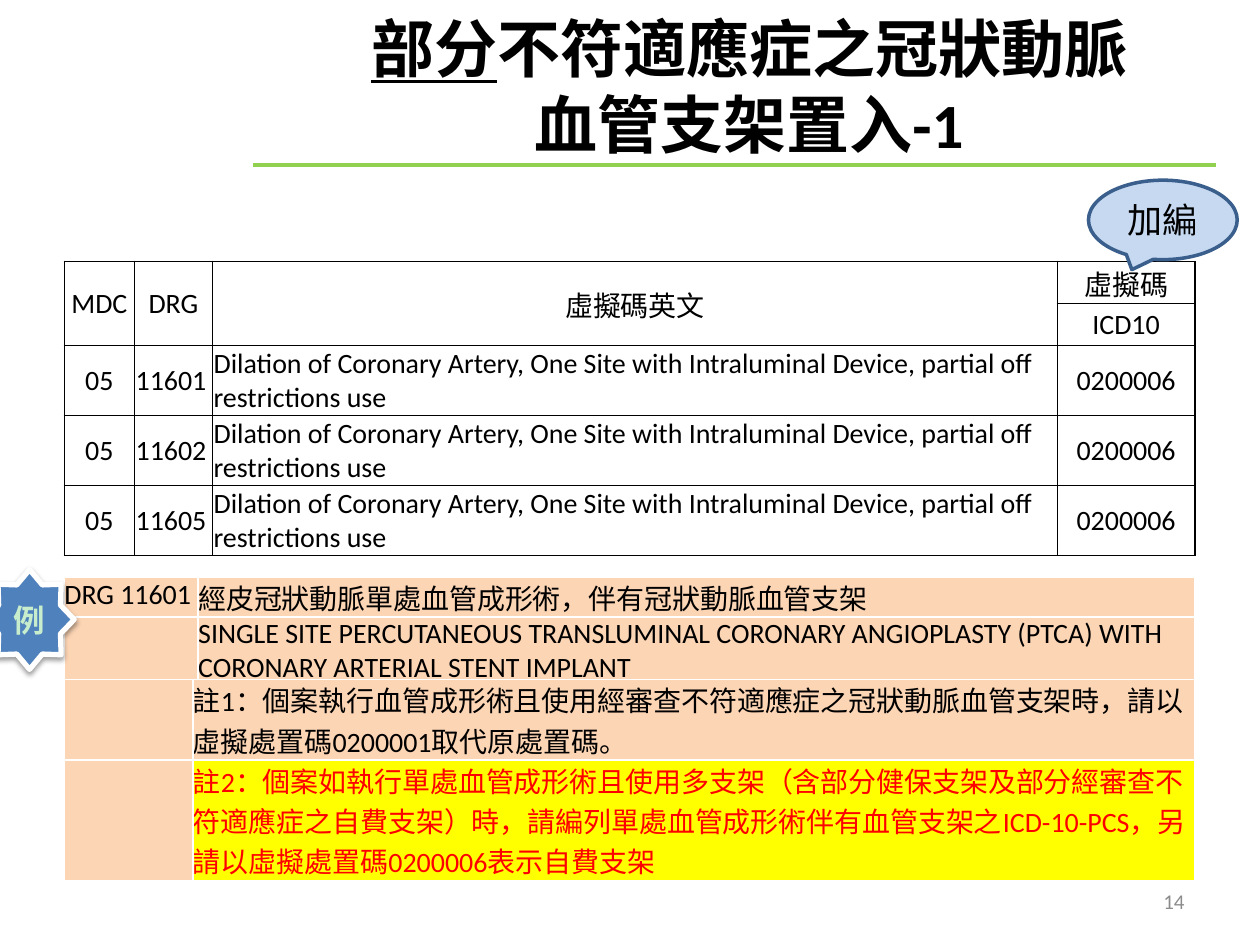
"""Build the slide on virtual codes for coronary stents that partly miss the indications."""
import lxml.etree
import pptx
import pptx.dml.color
import pptx.enum.dml
import pptx.enum.shapes
import pptx.enum.text
import pptx.oxml
import pptx.oxml.ns
import pptx.util

Pt = pptx.util.Pt
ALIGN = pptx.enum.text.PP_ALIGN
ANCHOR = pptx.enum.text.MSO_ANCHOR
SHAPE = pptx.enum.shapes.MSO_SHAPE

THEME = {
    "latin": "Calibri", "east_asian": "Noto Sans CJK TC",
    "black": "000000", "white": "FFFFFF", "red": "FF0000", "gray": "8C8C8C",
    "green": "92D050", "pale_green": "C7EDCC", "peach": "FCD5B5", "yellow": "FFFF00",
    "blue": "4F81BD", "pale_blue": "C6D9F1", "dark_blue": "3A5F8C",
    "title": 36, "callout": 20, "star": 18, "body": 16, "number": 12,
}

TITLE = [("部分", True), ("不符適應症之冠狀動脈\v血管支架置入-1", False)]
DEVICE = ("Dilation of Coronary Artery, One Site with Intraluminal Device, "
          "partial off restrictions use")
CODE_ROWS = [
    ["MDC", "DRG", "虛擬碼英文", "虛擬碼"],
    ["", "", "", "ICD10"],
    *[["05", drg, DEVICE, "0200006"] for drg in ("11601", "11602", "11605")],
]
EXAMPLE_ROWS = [
    ["DRG 11601", "經皮冠狀動脈單處血管成形術，伴有冠狀動脈血管支架"],
    ["", "SINGLE SITE PERCUTANEOUS TRANSLUMINAL CORONARY ANGIOPLASTY (PTCA) WITH "
         "CORONARY ARTERIAL STENT IMPLANT"],
]
NOTE_ROWS = [
    ["", "註1：個案執行血管成形術且使用經審查不符適應症之冠狀動脈血管支架時，"
         "請以虛擬處置碼0200001取代原處置碼。"],
    ["", "註2：個案如執行單處血管成形術且使用多支架（含部分健保支架及部分經審查"
         "不符適應症之自費支架）時，請編列單處血管成形術伴有血管支架之ICD-10-PCS，"
         "另請以虛擬處置碼0200006表示自費支架"],
]

TABLE_LEFT = 36.8
CODE_TABLE = {"top": 149.4, "columns": [40, 44.6, 482.9, 78.5], "heights": [24, 24, 40, 40, 40]}
EXAMPLE_TABLE = {"top": 330, "columns": [76.5, 569.5], "heights": [22.5, 35.5]}
NOTE_TABLE = {"top": 388.2, "columns": [73.5, 572.5], "heights": [46, 69]}


def rgb(name):
    return pptx.dml.color.RGBColor.from_string(THEME[name])


def set_values(target, values):
    for name, value in values.items():
        setattr(target, name, value)


def add_run(paragraph, text, size, color="black", latin="latin", **values):
    first, *rest = text.split("\v")
    for index, part in enumerate([first, *rest]):
        if index:
            paragraph.add_line_break()
        run = paragraph.add_run()
        run.text = part
        set_values(run.font, {"size": Pt(THEME[size]), "name": THEME[latin], **values})
        run.font.color.rgb = rgb(color)
        east_asian = lxml.etree.SubElement(run.font._element, pptx.oxml.ns.qn("a:ea"))
        east_asian.set("typeface", THEME["east_asian"])


def add_borders(cell, color):
    properties = cell._tc.get_or_add_tcPr()
    for index, side in enumerate("LRTB"):
        properties.insert(index, pptx.oxml.parse_xml(
            f'<a:ln{side} {pptx.oxml.ns.nsdecls("a")} w="12700"><a:solidFill>'
            f'<a:srgbClr val="{THEME[color]}"/></a:solidFill></a:ln{side}>'))


def add_table(slide, rows, layout, border, style):
    columns, heights = layout["columns"], layout["heights"]
    table = slide.shapes.add_table(
        len(rows), len(columns), Pt(TABLE_LEFT), Pt(layout["top"]),
        Pt(sum(columns)), Pt(sum(heights))).table
    set_values(table, {"first_row": False, "horz_banding": False})
    for column, width in zip(table.columns, columns):
        column.width = Pt(width)
    for row, height in zip(table.rows, heights):
        row.height = Pt(height)
    for row_index, texts in enumerate(rows):
        for column_index, text in enumerate(texts):
            cell = table.cell(row_index, column_index)
            form = style(row_index, column_index)
            margin = Pt(form["margin"])
            set_values(cell, {"margin_left": margin, "margin_right": margin, "margin_top": margin,
                              "margin_bottom": 0, "vertical_anchor": form["anchor"]})
            if form["fill"]:
                cell.fill.solid()
                cell.fill.fore_color.rgb = rgb(form["fill"])
            else:
                cell.fill.background()
            add_borders(cell, border)
            paragraph = cell.text_frame.paragraphs[0]
            paragraph.alignment = form["align"]
            if text:
                add_run(paragraph, text, "body", form["color"], form["latin"])
            else:
                paragraph.font.size = Pt(THEME["body"])
    return table


def code_style(row, column):
    centered = row < 2 or column in (0, 3)
    return {"margin": 0.72, "anchor": ANCHOR.MIDDLE, "fill": None, "color": "black",
            "latin": "latin", "align": ALIGN.CENTER if centered else ALIGN.LEFT}


def example_style(row, column):
    return {"margin": 0, "anchor": ANCHOR.TOP, "fill": "peach", "color": "black",
            "latin": "east_asian" if (row, column) == (0, 1) else "latin", "align": ALIGN.LEFT}


def note_style(row, column):
    marked = {"fill": "yellow", "color": "red"} if (row, column) == (1, 1) else {}
    return {**example_style(row, column), "latin": "latin", **marked}


def add_badge(slide, kind, box, fill, line, width, text, size, color, bold):
    shape = slide.shapes.add_shape(kind, *map(Pt, box))
    shape.shadow.inherit = False
    shape.fill.solid()
    shape.fill.fore_color.rgb = rgb(fill)
    shape.line.color.rgb = rgb(line)
    shape.line.width = Pt(width)
    set_values(shape.text_frame, {"word_wrap": True, "vertical_anchor": ANCHOR.MIDDLE})
    paragraph = shape.text_frame.paragraphs[0]
    paragraph.alignment = ALIGN.CENTER
    add_run(paragraph, text, size, color, bold=bold)
    return shape


def add_shadow(shape):
    effects = shape._element.spPr.find(pptx.oxml.ns.qn("a:effectLst"))
    effects.append(pptx.oxml.parse_xml(
        f'<a:outerShdw {pptx.oxml.ns.nsdecls("a")} blurRad="{Pt(3.1)}" dist="{Pt(1.6)}" '
        f'dir="5400000" rotWithShape="0"><a:srgbClr val="{THEME["black"]}">'
        '<a:alpha val="38000"/></a:srgbClr></a:outerShdw>'))


def add_title(slide):
    title = slide.shapes.title
    set_values(title, {"left": Pt(178.5), "top": Pt(3.6), "width": Pt(499), "height": Pt(90)})
    set_values(title.text_frame, {"word_wrap": True, "vertical_anchor": ANCHOR.MIDDLE,
                                  "auto_size": pptx.enum.text.MSO_AUTO_SIZE.NONE})
    paragraph = title.text_frame.paragraphs[0]
    paragraph.alignment = ALIGN.CENTER
    for text, underline in TITLE:
        add_run(paragraph, text, "title", bold=True, underline=underline)
    rule = slide.shapes.add_connector(
        pptx.enum.shapes.MSO_CONNECTOR.STRAIGHT, Pt(144.7), Pt(94.3), Pt(694.8), Pt(94.3))
    rule.line.color.rgb = rgb("green")
    rule.line.width = Pt(2.25)
    lxml.etree.SubElement(rule._element.spPr, pptx.oxml.ns.qn("a:effectLst"))


def add_page_number(slide):
    box = slide.shapes.add_textbox(Pt(516), Pt(500.4), Pt(168), Pt(28.8))
    set_values(box.text_frame, {"word_wrap": True, "vertical_anchor": ANCHOR.MIDDLE})
    paragraph = box.text_frame.paragraphs[0]
    paragraph.alignment = ALIGN.RIGHT
    add_run(paragraph, "14", "number", "gray")


def main():
    presentation = pptx.Presentation()
    set_values(presentation, {"slide_width": Pt(720), "slide_height": Pt(540)})
    slide = presentation.slides.add_slide(presentation.slide_layouts[5])
    slide.background.fill.solid()
    slide.background.fill.fore_color.rgb = rgb("white")
    add_title(slide)
    add_page_number(slide)
    codes = add_table(slide, CODE_ROWS, CODE_TABLE, "black", code_style)
    for column in range(3):
        codes.cell(0, column).merge(codes.cell(1, column))
    add_table(slide, EXAMPLE_ROWS, EXAMPLE_TABLE, "white", example_style)
    add_table(slide, NOTE_ROWS, NOTE_TABLE, "white", note_style)
    star = add_badge(slide, SHAPE.STAR_8_POINT, (-8.6, 325.5, 51, 57), "blue", "white", 3,
                     "例", "star", "pale_green", True)
    add_shadow(star)
    add_badge(slide, SHAPE.OVAL_CALLOUT, (622, 103, 85, 45.4), "pale_blue", "dark_blue", 2,
              "加編", "callout", "black", False)
    presentation.save("out.pptx")


if __name__ == "__main__":
    main()
